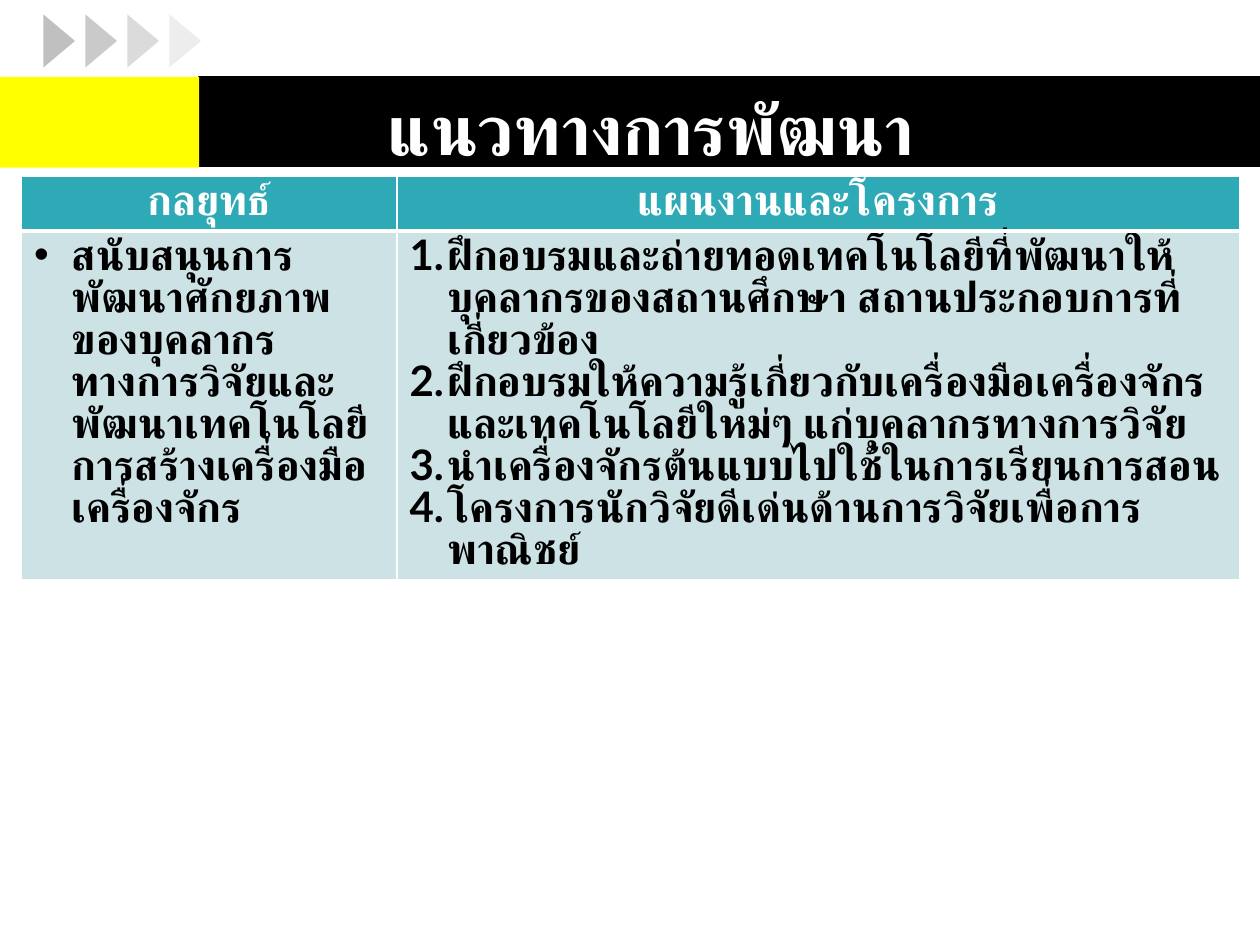
from lxml.etree import SubElement
from pptx import Presentation
from pptx.dml.color import RGBColor
from pptx.enum.shapes import MSO_SHAPE as Shape
from pptx.enum.text import MSO_ANCHOR as Anchor, MSO_AUTO_SIZE as Fit, PP_ALIGN as Align
from pptx.oxml import parse_xml
from pptx.oxml.ns import nsdecls, qn
from pptx.util import Inches, Pt

BLACK = RGBColor(0, 0, 0)
WHITE = RGBColor(255, 255, 255)
YELLOW = RGBColor(255, 255, 0)
GREY = RGBColor(0xC0, 0xC0, 0xC0)
TEAL = RGBColor(0x2E, 0xA9, 0xB6)
PALE = RGBColor(0xCD, 0xE2, 0xE5)

HEADS = ["กลยุทธ์", "แผนงานและโครงการ"]
GOALS = ["สนับสนุนการพัฒนาศักยภาพของบุคลากรทางการวิจัยและพัฒนาเทคโนโลยีการสร้างเครื่องมือเครื่องจักร"]
PLANS = [
    "ฝึกอบรมและถ่ายทอดเทคโนโลยีที่พัฒนาให้บุคลากรของสถานศึกษา สถานประกอบการที่เกี่ยวข้อง",
    "ฝึกอบรมให้ความรู้เกี่ยวกับเครื่องมือเครื่องจักรและเทคโนโลยีใหม่ๆ แก่บุคลากรทางการวิจัย",
    "นำเครื่องจักรต้นแบบไปใช้ในการเรียนการสอน",
    "โครงการนักวิจัยดีเด่นด้านการวิจัยเพื่อการพาณิชย์",
]


def style(para, size, color):
    """Set the bold face for Latin and Thai text alike."""
    font = para.font
    font.name, font.size, font.bold = "Lato", Pt(size), True
    font.color.rgb = color
    base = para._p.pPr.find(qn("a:defRPr"))
    SubElement(base, qn("a:cs"), typeface="Lato")


def add_box(kind, left, top, width, height, color):
    box = slide.shapes.add_shape(
        kind, Inches(left), Inches(top), Inches(width), Inches(height))
    box.shadow.inherit = False
    box.fill.solid()
    box.fill.fore_color.rgb = color
    box.line.fill.background()
    return box


prs = Presentation()
prs.slide_width, prs.slide_height = Inches(10), Inches(7.5)
slide = prs.slides.add_slide(prs.slide_layouts[5])

# Banner
bar = add_box(Shape.RECTANGLE, 1.58, 0.61, 8.42, 0.71, BLACK)
bar.line.color.rgb = BLACK
bar.line.width = Pt(0.75)
add_box(Shape.RECTANGLE, 0, 0.61, 1.58, 0.72, YELLOW)

# Fading arrows
for i, alpha in enumerate([100, 84, 56, 27]):
    arrow = add_box(Shape.ISOSCELES_TRIANGLE, 0.26 + i / 3, 0.2, 0.42, 0.25, GREY)
    arrow.rotation = 90
    if alpha < 100:
        tint = arrow._element.spPr.find(".//" + qn("a:srgbClr"))
        SubElement(tint, qn("a:alpha"), val=str(alpha * 1000))

# Strategy table
frame = slide.shapes.add_table(
    2, 2, Inches(0.17), Inches(1.4), Inches(9.67), Inches(1.52))
table = frame.table
for col, width in zip(table.columns, [2.98, 6.69]):
    col.width = Inches(width)
for row, height in zip(table.rows, [0.38, 1.14]):
    row.height = Inches(height)

texts = [[[head] for head in HEADS], [GOALS, PLANS]]
for r, row in enumerate(texts):
    for c, lines in enumerate(row):
        cell = table.cell(r, c)
        cell.fill.solid()
        cell.fill.fore_color.rgb = PALE if r else TEAL
        thick = "lnT" if r else "lnB"
        for i, edge in enumerate(["lnL", "lnR", "lnT", "lnB"]):
            width = Pt(3 if edge == thick else 1)
            cell._tc.tcPr.insert(i, parse_xml(
                f'<a:{edge} {nsdecls("a")} w="{width}"><a:solidFill>'
                f'<a:srgbClr val="{WHITE}"/></a:solidFill></a:{edge}>'))
        cell.text = "\n".join(lines)
        for para in cell.text_frame.paragraphs:
            para.line_spacing = Pt(24)
            if r:
                props = para._p.get_or_add_pPr()
                props.set("marL", str(Inches(0.3)))
                props.set("indent", str(Inches(-0.3)))
                SubElement(props, qn("a:buFont"), typeface="Arial")
                if c:
                    SubElement(props, qn("a:buAutoNum"), type="arabicPeriod")
                else:
                    SubElement(props, qn("a:buChar"), char="•")
            else:
                para.alignment = Align.CENTER
            style(para, 24, BLACK if r else WHITE)

# Title, in front of the banner
title = slide.shapes.title
title.left, title.top = Inches(2.83), Inches(0.63)
title.width, title.height = Inches(4.67), Inches(0.77)
slide.shapes._spTree.append(title._element)
title.text = "แนวทางการพัฒนา"
body = title.text_frame
body.word_wrap = True
body.auto_size = Fit.SHAPE_TO_FIT_TEXT
body.vertical_anchor = Anchor.TOP
body.paragraphs[0].alignment = Align.CENTER
style(body.paragraphs[0], 40, WHITE)

prs.save("out.pptx")
